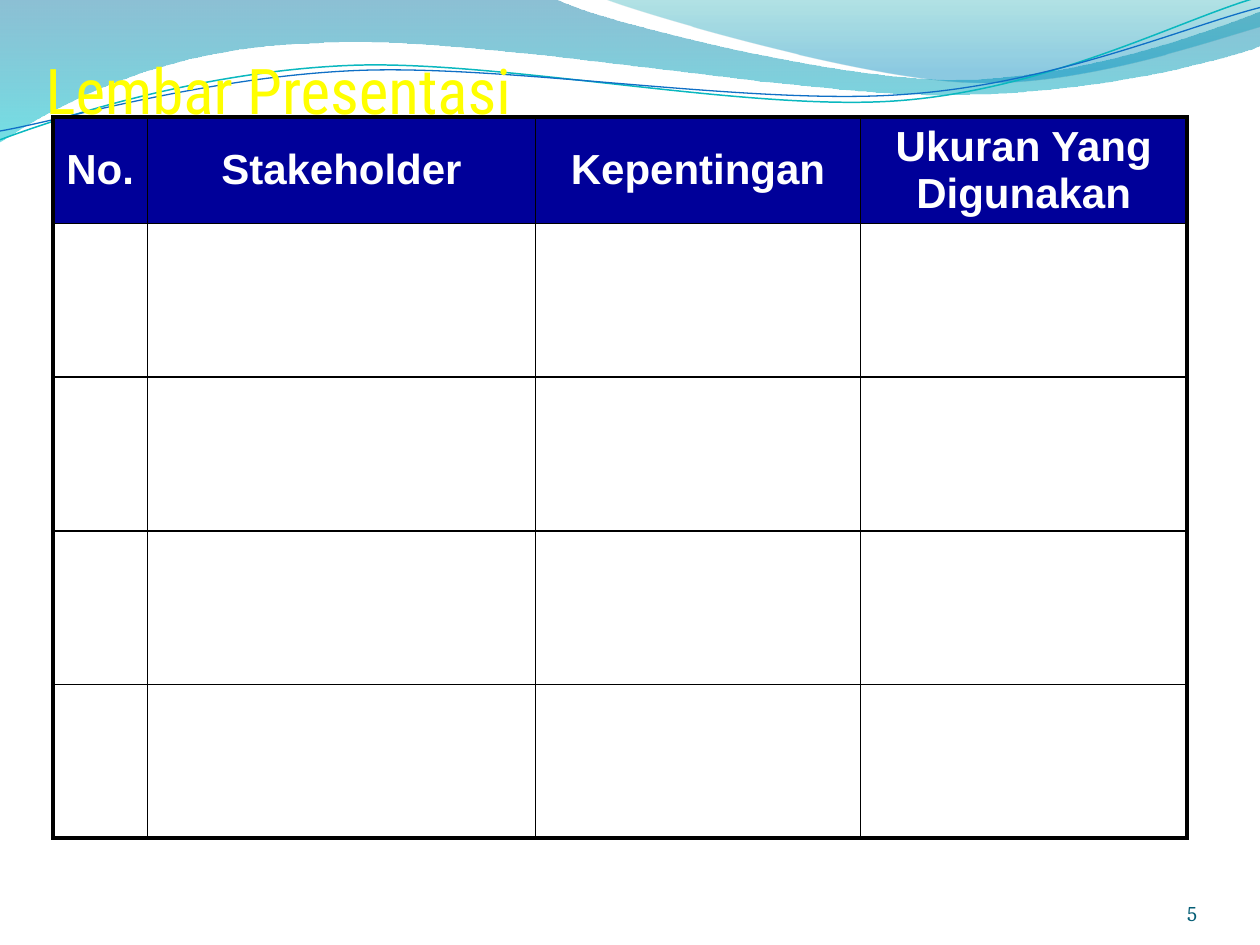
from lxml.etree import SubElement
from pptx import Presentation
from pptx.dml.color import RGBColor
from pptx.enum.text import MSO_ANCHOR as Anchor, MSO_AUTO_SIZE as Fit, PP_ALIGN as Align
from pptx.oxml import parse_xml
from pptx.oxml.ns import nsdecls, qn
from pptx.util import Inches, Pt

HEADS = ["No.", "Stakeholder", "Kepentingan", "Ukuran Yang Digunakan"]
COLS = [0.75, 3.08, 2.58, 2.59]
ROWS = [0.84] + 4 * [1.22]
THIN, THICK = 1, 2.25

# Each wave is a list of parts: one point draws a line to it, three draw a curve.
BAND = [[(0, 0)], [(4.4, -0.01)],
        [(4.76, 0.17), (6.64, 0.63), (7.58, 0.63)],
        [(8.53, 0.63), (9.58, 0.26), (10, 0.09)], [(10.01, 0.36)],
        [(9.83, 0.44), (8.7, 0.76), (7.46, 0.75)],
        [(6.22, 0.75), (3.82, 0.28), (2.57, 0.34)],
        [(1.29, 0.36), (0.46, 0.83), (-0.01, 1.13)]]
CREST = [[(4.79, -0.01)], [(5.09, 0.11), (6.82, 0.62), (7.69, 0.65)],
         [(8.56, 0.69), (9.61, 0.32), (10, 0.21)], [(10, 0)]]
TEAL = [[(0, 1.11)], [(0.48, 0.93), (1.58, 0.57), (2.77, 0.52)],
        [(3.95, 0.47), (5.93, 0.89), (7.13, 0.8)],
        [(8.33, 0.71), (9.38, 0.15), (9.98, -0.02)]]
BLUE = [[(0, 1.04)], [(0.47, 0.96), (1.64, 0.61), (2.83, 0.56)],
        [(4.03, 0.51), (5.97, 0.84), (7.17, 0.75)],
        [(8.36, 0.67), (9.41, 0.21), (10, 0.06)]]


def color(code):
    return RGBColor.from_string(code)


def bend(shape, wave):
    """Join each three line segments that stand for a curve into one cubic curve."""
    lines = iter(list(shape._element.iter(qn("a:lnTo"))))
    for part in wave[1:]:
        segs = [next(lines) for _ in part]
        if len(segs) == 3:
            curve = parse_xml(f'<a:cubicBezTo {nsdecls("a")}/>')
            segs[0].addprevious(curve)
            for seg in segs:
                curve.append(seg[0])
                seg.getparent().remove(seg)


def add_wave(slide, wave, close):
    first, *rest = [(Inches(x), Inches(y)) for part in wave for x, y in part]
    pen = slide.shapes.build_freeform(*first)
    pen.add_line_segments(rest, close=close)
    shape = pen.convert_to_shape()
    bend(shape, wave)
    shape.shadow.inherit = False
    return shape


def add_area(slide, wave, stops):
    """Fill a wave from top to bottom; a stop is position, colour, opacity in percent."""
    shape = add_wave(slide, wave, True)
    shape.line.fill.background()
    shape.fill.gradient()
    shape.fill.gradient_angle = 270
    for stop, (pos, code, _) in zip(shape.fill.gradient_stops, stops):
        stop.position = pos
        stop.color.rgb = color(code)
    for tone, (_, _, alpha) in zip(shape._element.spPr.iter(qn("a:srgbClr")), stops):
        SubElement(tone, qn("a:alpha"), val=str(alpha * 1000))


def add_curve(slide, wave, code, width):
    shape = add_wave(slide, wave, False)
    shape.fill.background()
    shape.line.color.rgb = color(code)
    shape.line.width = Pt(width)


def style(para, font, size, code, align, bold=False):
    para.alignment = align
    para.font.name, para.font.size, para.font.bold = font, Pt(size), bold
    para.font.color.rgb = color(code)


def clear_margins(frame):
    frame.margin_left = frame.margin_right = frame.margin_top = frame.margin_bottom = 0


def set_edges(cell, widths):
    """Draw the left, right, top and bottom borders of a cell."""
    props = cell._tc.get_or_add_tcPr()
    for n, (side, width) in enumerate(zip("LRTB", widths)):
        props.insert(n, parse_xml(
            f'<a:ln{side} {nsdecls("a")} w="{Pt(width)}"><a:solidFill>'
            f'<a:srgbClr val="000000"/></a:solidFill></a:ln{side}>'))


def add_grid(slide):
    frame = slide.shapes.add_table(len(ROWS), len(COLS), Inches(0.42), Inches(0.93),
                                   Inches(sum(COLS)), Inches(sum(ROWS)))
    table = frame.table
    table.first_row = table.horz_banding = False
    for col, width in zip(table.columns, COLS):
        col.width = Inches(width)
    for r, height in enumerate(ROWS):
        table.rows[r].height = Inches(height)
        for c, head in enumerate(HEADS):
            cell = table.cell(r, c)
            outer = (c == 0, c == len(COLS) - 1, r == 0, r == len(ROWS) - 1)
            if r == 0:
                cell.text = head
                cell.vertical_anchor = Anchor.MIDDLE
                style(cell.text_frame.paragraphs[0], "Arial", 24, "FFFFFF",
                      Align.CENTER, True)
                cell.fill.solid()
                cell.fill.fore_color.rgb = color("000099")
            else:
                cell.fill.background()
            set_edges(cell, [THICK if out else THIN for out in outer])


def place_title(slide, text):
    title = slide.shapes.title
    title.left, title.top = Inches(0.31), Inches(0.36)
    title.width, title.height = Inches(3.8), Inches(0.39)
    frame = title.text_frame
    frame.text = text
    frame.word_wrap = False
    frame.auto_size = Fit.NONE
    frame.vertical_anchor = Anchor.TOP
    clear_margins(frame)
    frame.margin_top = Inches(0.05)
    style(frame.paragraphs[0], "Roboto Condensed", 36, "FFFF00", Align.CENTER)
    slide.shapes._spTree.append(title._element)  # bring to front


def add_number(slide, text):
    box = slide.shapes.add_textbox(Inches(8.25), Inches(6.83), Inches(1.25), Inches(0.52))
    frame = box.text_frame
    frame.text = text
    frame.word_wrap = True
    frame.vertical_anchor = Anchor.BOTTOM
    clear_margins(frame)
    style(frame.paragraphs[0], "Cambria", 12, "045D75", Align.RIGHT)


def main():
    deck = Presentation()
    deck.slide_width, deck.slide_height = Inches(10), Inches(7.5)
    slide = deck.slides.add_slide(deck.slide_layouts[5])
    add_area(slide, BAND, [(0, "0074A1", 45), (1, "00C6CF", 55)])
    add_area(slide, CREST, [(0, "00A1A9", 30), (0.8, "008BBF", 45)])
    add_curve(slide, TEAL, "0AB8BF", 0.85)
    add_curve(slide, BLUE, "0F6FC6", 0.75)
    add_grid(slide)
    add_number(slide, "5")
    place_title(slide, "Lembar Presentasi")
    deck.save("out.pptx")


if __name__ == "__main__":
    main()
